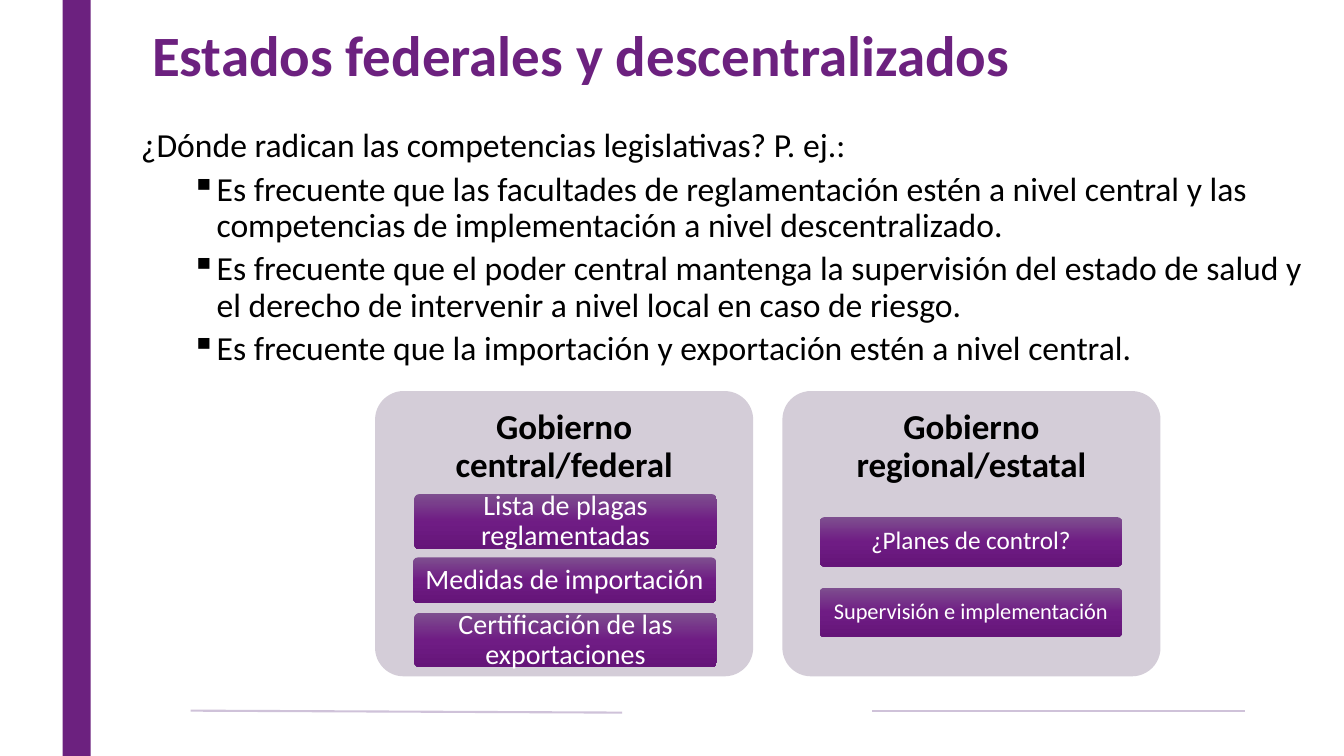
from copy import deepcopy

from lxml import etree
from pptx import Presentation
from pptx.dml.color import RGBColor
from pptx.enum.shapes import MSO_CONNECTOR, MSO_SHAPE
from pptx.enum.text import MSO_ANCHOR, PP_ALIGN
from pptx.oxml.ns import qn
from pptx.util import Pt

PX = 9144  # 100 px to the inch
RECTANGLE, ROUNDED = MSO_SHAPE.RECTANGLE, MSO_SHAPE.ROUNDED_RECTANGLE
STRAIGHT = MSO_CONNECTOR.STRAIGHT
TOP, MIDDLE = MSO_ANCHOR.TOP, MSO_ANCHOR.MIDDLE
LEFT, CENTER = PP_ALIGN.LEFT, PP_ALIGN.CENTER

PURPLE = RGBColor(0x6C, 0x21, 0x7F)
LILAC = RGBColor(0xCF, 0xC2, 0xD9)
CARD = RGBColor(0xD4, 0xCD, 0xD8)
BLACK = RGBColor(0, 0, 0)
WHITE = RGBColor(0xFF, 0xFF, 0xFF)
BUTTON_STOPS = [(0, RGBColor(0x7E, 0x4F, 0x8F)),
                (0.5, RGBColor(0x6F, 0x1C, 0x84)),
                (1, RGBColor(0x65, 0x15, 0x79))]

deck = Presentation()
deck.slide_width, deck.slide_height = 1333 * PX, 750 * PX
slide = deck.slides.add_slide(deck.slide_layouts[6])


def add_shape(kind, left, top, width, height):
    shape = slide.shapes.add_shape(kind, left * PX, top * PX, width * PX, height * PX)
    shape.shadow.inherit = False
    shape.line.fill.background()
    if kind == ROUNDED:
        shape.adjustments[0] = 0.1
    return shape


def write(box, lines, size, color, bold=False, align=LEFT, anchor=TOP,
          inset=(10, 5), bullet_from=None):
    frame = box.text_frame
    frame.word_wrap = True
    frame.vertical_anchor = anchor
    frame.margin_left = frame.margin_right = inset[0] * PX
    frame.margin_top = frame.margin_bottom = inset[1] * PX
    for index, line in enumerate(lines):
        para = frame.paragraphs[0] if index == 0 else frame.add_paragraph()
        if bullet_from is not None and index >= bullet_from:
            properties = para._p.get_or_add_pPr()
            properties.set("marL", str(75 * PX))
            properties.set("indent", str(-25 * PX))
            etree.SubElement(properties, qn("a:buChar")).set("char", "▪")
        para.alignment = align
        para.line_spacing = 0.9
        if index:
            para.space_before = Pt(5)
        span = para.add_run()
        span.text = line
        span.font.name, span.font.size = "Calibri", Pt(size)
        span.font.bold, span.font.color.rgb = bold, color


# Side bar and footer lines
bar = add_shape(RECTANGLE, 62, 0, 28, 750)
bar.fill.solid()
bar.fill.fore_color.rgb = PURPLE
for ends in [(617, 707, 189, 705), (865, 705, 1235, 705)]:
    rule = slide.shapes.add_connector(STRAIGHT, *(end * PX for end in ends))
    rule.line.color.rgb = LILAC
    rule.line.width = Pt(1.5)
    etree.SubElement(rule._element.spPr, qn("a:effectLst"))

# Title and body
title = slide.shapes.add_textbox(141 * PX, 22 * PX, 1000 * PX, 120 * PX)
write(title, ["Estados federales y descentralizados"], 40.7, PURPLE, bold=True)
body = slide.shapes.add_textbox(130 * PX, 123 * PX, 1185 * PX, 142 * PX)
write(body, [
    "¿Dónde radican las competencias legislativas? P. ej.:",
    "Es frecuente que las facultades de reglamentación estén a nivel central y las "
    "competencias de implementación a nivel descentralizado.",
    "Es frecuente que el poder central mantenga la supervisión del estado de salud y "
    "el derecho de intervenir a nivel local en caso de riesgo.",
    "Es frecuente que la importación y exportación estén a nivel central.",
], 24, BLACK, bullet_from=1)

# Government cards: left, heading, buttons (left, top, height, text, size)
cards = [
    (372, "Gobierno central/federal", [
        (411, 490, 55, "Lista de plagas reglamentadas", 20),
        (410, 553, 45, "Medidas de importación", 20),
        (411, 608, 54, "Certificación de las exportaciones", 20)]),
    (776, "Gobierno regional/estatal", [
        (813, 513, 49, "¿Planes de control?", 18),
        (813, 583, 49, "Supervisión e implementación", 16)]),
]
for card_left, heading, buttons in cards:
    card = add_shape(ROUNDED, card_left, 388, 375, 283)
    card.fill.solid()
    card.fill.fore_color.rgb = CARD
    label = slide.shapes.add_textbox(card_left * PX, 401 * PX, 375 * PX, 85 * PX)
    write(label, [heading], 25, BLACK, bold=True, align=CENTER, anchor=MIDDLE,
          inset=(15, 0))
    for left, top, height, text, size in buttons:
        button = add_shape(ROUNDED, left, top, 300, height)
        button.fill.gradient()
        button.fill.gradient_angle = 270
        stop_list = button._element.spPr.find(qn("a:gradFill")).find(qn("a:gsLst"))
        stop_list.append(deepcopy(stop_list[-1]))
        for stop, (position, color) in zip(button.fill.gradient_stops, BUTTON_STOPS):
            stop.position = position
            stop.color.rgb = color
        write(button, [text], size, WHITE, align=CENTER, anchor=MIDDLE, inset=(7, 4))

deck.save("out.pptx")
